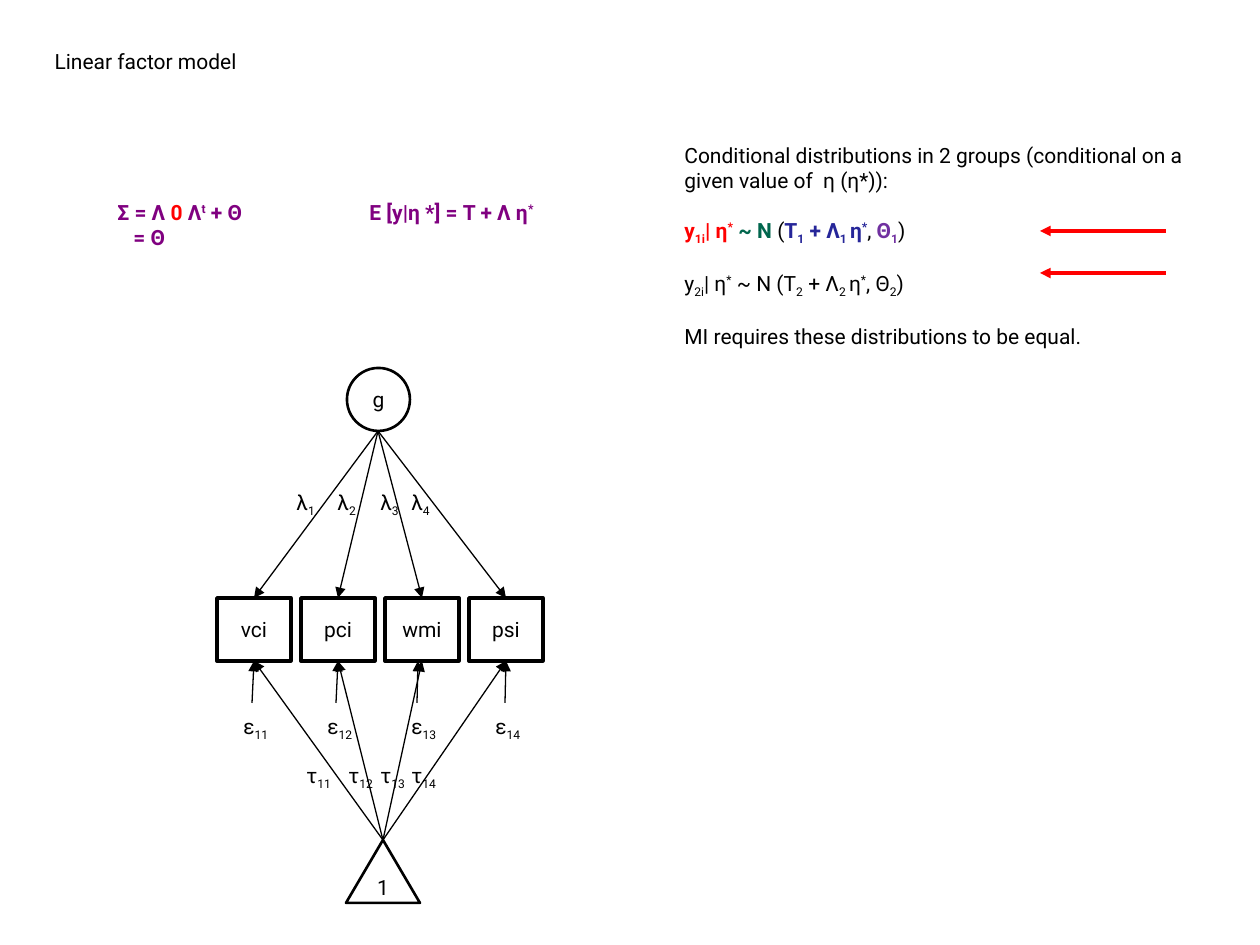
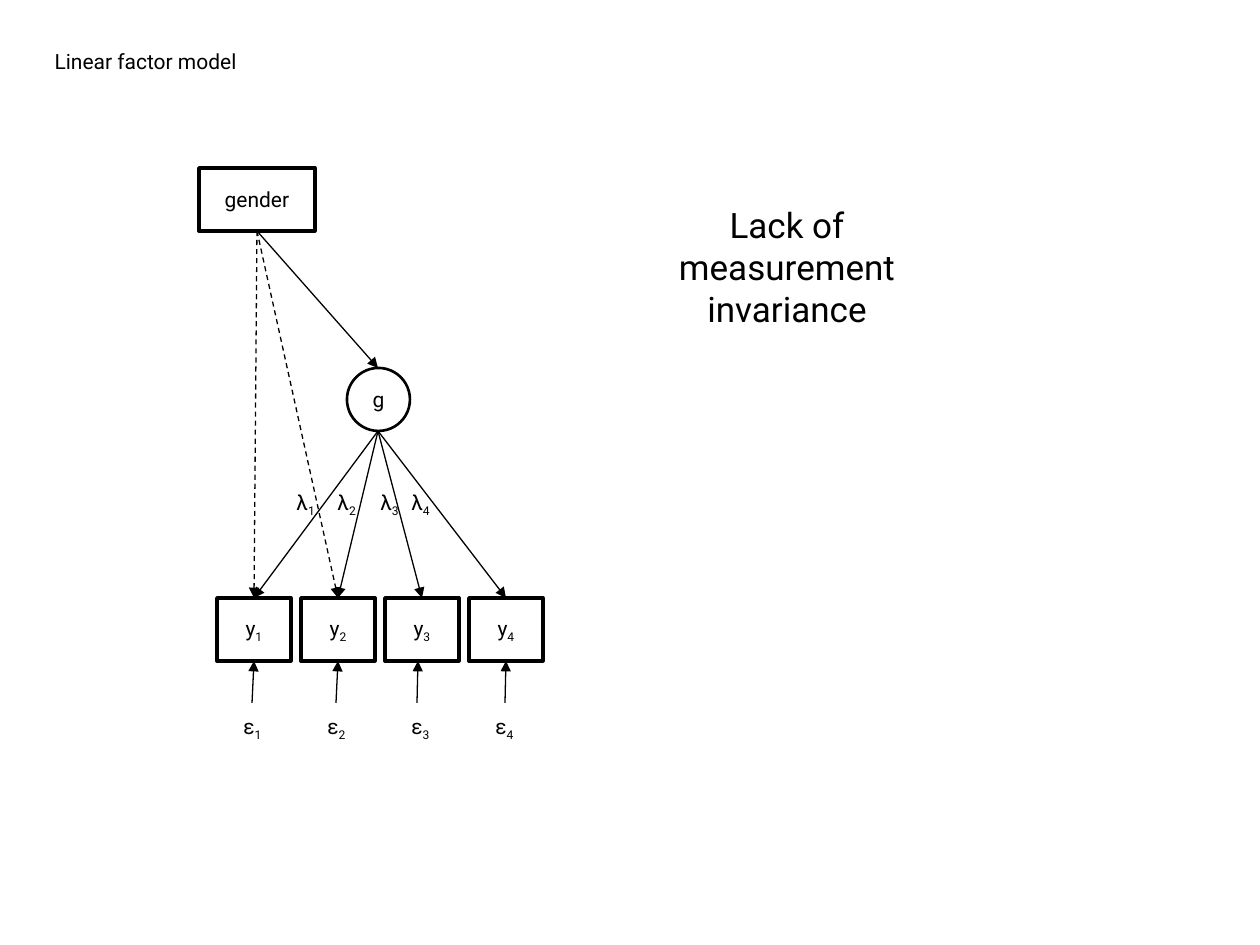
from lxml import etree
from pptx import Presentation
from pptx.dml.color import RGBColor
from pptx.enum.dml import MSO_LINE
from pptx.enum.shapes import MSO_CONNECTOR, MSO_SHAPE
from pptx.enum.text import MSO_ANCHOR, PP_ALIGN
from pptx.oxml.ns import qn
from pptx.util import Pt

PX = 914400 / 126
RECT, OVAL, TRIANGLE = MSO_SHAPE.RECTANGLE, MSO_SHAPE.OVAL, MSO_SHAPE.ISOSCELES_TRIANGLE
STRAIGHT, DASH = MSO_CONNECTOR.STRAIGHT, MSO_LINE.DASH
LEFT, CENTER = PP_ALIGN.LEFT, PP_ALIGN.CENTER
TOP_ANCHOR, MIDDLE_ANCHOR = MSO_ANCHOR.TOP, MSO_ANCHOR.MIDDLE
TOP_SIDE, BOTTOM_SIDE = 0, 2
SUB, SUP = -25, 30
FONT = "Roboto"
COLORS = {
    "black": "000000", "white": "FFFFFF", "red": "FF0000", "green": "00664D",
    "blue": "262699", "violet": "7030A0", "purple": "800080",
}
BOX_W, BOX_H, BOX_STEP = 74, 63, 84


def emu(*lengths):
    """Turn px lengths into EMU."""
    return [round(n * PX) for n in lengths]


def rgb(name):
    """Look up a colour by name."""
    return RGBColor.from_string(COLORS[name])


def write(p, runs, size=12, align=LEFT):
    """Fill a paragraph with (text, baseline, colour) runs; coloured runs are bold."""
    p.alignment = align
    p.font.name, p.font.size = FONT, Pt(size)
    for text, base, color in runs:
        r = p.add_run()
        r.text = text
        r.font.color.rgb = rgb(color)
        r.font.bold = color != "black"
        if base:
            r._r.get_or_add_rPr().set("baseline", str(base * 1000))


def symbol(letter, index=""):
    """Return the runs of a letter with an optional subscript."""
    runs = [(letter, 0, "black")]
    return runs + [(index, SUB, "black")] if index else runs


def text_box(s, box, paragraphs, size=12, align=LEFT, gap=0):
    """Add a wrapped text box with a gap in points between paragraphs."""
    tf = s.shapes.add_textbox(*emu(*box)).text_frame
    tf.word_wrap = True
    for i, runs in enumerate(paragraphs):
        p = tf.add_paragraph() if i else tf.paragraphs[0]
        p.space_before = Pt(gap if i else 0)
        write(p, runs, size, align)
    return tf


def node(s, kind, box, runs):
    """Add an outlined node with centred text."""
    sp = s.shapes.add_shape(kind, *emu(*box))
    sp.shadow.inherit = False
    sp.line.color.rgb = rgb("black")
    sp.line.width = Pt(2 if kind == RECT else 1.5)
    tf = sp.text_frame
    tf.vertical_anchor = MIDDLE_ANCHOR
    if kind == RECT:
        sp.fill.solid()
        sp.fill.fore_color.rgb = rgb("white")
    else:
        sp.fill.background()
        tf.margin_left = tf.margin_right = 0
    write(tf.paragraphs[0], runs, align=CENTER)
    return sp


def arrow(s, start, end, color="black", width=0.75, dash=None, source=None, target=None):
    """Draw an arrow, joined to (shape, side) pairs where given."""
    c = s.shapes.add_connector(STRAIGHT, *emu(*start, *end))
    if source:
        c.begin_connect(*source)
    if target:
        c.end_connect(*target)
    c.line.color.rgb = rgb(color)
    c.line.width = Pt(width)
    if dash:
        c.line.dash_style = dash
    etree.SubElement(c.line._get_or_add_ln(), qn("a:tailEnd"), type="triangle")
    etree.SubElement(c._element.spPr, qn("a:effectLst"))


def new_slide(prs):
    """Add a slide with the shared title."""
    s = prs.slides.add_slide(prs.slide_layouts[5])
    title = s.shapes.title
    title.left, title.top, title.width, title.height = emu(42, 42, 1176, 38)
    title.text_frame.vertical_anchor = TOP_ANCHOR
    write(title.text_frame.paragraphs[0], symbol("Linear factor model"))
    return s


def labels(s, letter, indices, lefts, top):
    """Place a row of subscripted path labels."""
    for index, left in zip(indices, lefts):
        text_box(s, (left, top, 53, 42), [symbol(letter, index)])


def factor_diagram(s, x, y, indicators, error_indices):
    """Draw the factor, its four indicators and their errors; return the indicators."""
    row, bottom = y + 230, y + 230 + BOX_H
    node(s, OVAL, (x + 130, y, 63, 63), symbol("g"))
    boxes = []
    for i, (runs, error_x) in enumerate(zip(indicators, (35, 119, 200, 288))):
        left = x + i * BOX_STEP
        middle = left + BOX_W // 2
        box = node(s, RECT, (left, row, BOX_W, BOX_H), runs)
        arrow(s, (x + 161, y + 63), (middle, row), target=(box, TOP_SIDE))
        centred = abs(x + error_x - middle) < 3
        arrow(s, (x + error_x, y + 335), (x + error_x + 1, bottom),
              target=(box, BOTTOM_SIDE) if centred else None)
        boxes.append(box)
    labels(s, "λ", "1234", [x + n for n in (67, 108, 151, 182)], y + 115)
    labels(s, "ε", error_indices, [x + 14 + i * BOX_STEP for i in range(4)], y + 339)
    return boxes


def intercepts(s, x, y, boxes, indices):
    """Draw the constant below the indicators with its intercept paths."""
    node(s, TRIANGLE, (x, y, BOX_W, BOX_H), symbol("1"))
    apex = (x + BOX_W // 2, y)
    for box in boxes:
        arrow(s, apex, apex, target=(box, BOTTOM_SIDE))
    labels(s, "τ", indices, [x + n for n in (-52, -10, 22, 53)], y - 84)


def equations(s, x, y):
    """Write the covariance and conditional mean equations."""
    tf = text_box(s, (x, y, 210, 63), [
        [("Σ = Λ ", 0, "purple"), ("0", 0, "red"), (" Λ", 0, "purple"),
         ("t", SUP, "purple"), (" + Θ", 0, "purple")],
        [("= Θ", 0, "purple")]])
    tf.paragraphs[1]._p.get_or_add_pPr().set("marL", str(emu(16)[0]))
    text_box(s, (x + 252, y, 284, 38),
             [[("E [y|η *] = Τ + Λ η", 0, "purple"), ("*", SUP, "purple")]])


def distribution(group, outcome, normal, mean, spread):
    """Return the runs of one group's conditional distribution."""
    return [
        ("y", 0, outcome), (group + "i", SUB, outcome), ("| η", 0, outcome),
        ("*", SUP, outcome), (" ~ N ", 0, normal), ("(", 0, "black"),
        ("Τ", 0, mean), (group, SUB, mean), (" + Λ", 0, mean),
        (group + " ", SUB, mean), ("η", 0, mean), ("*", SUP, mean),
        (", ", 0, "black"), ("Θ", 0, spread), (group, SUB, spread), (")", 0, "black"),
    ]


def distributions(s, x, y):
    """Write the two conditional distributions and point at them."""
    text_box(s, (x, y, 546, 321), [
        symbol("Conditional distributions in 2 groups (conditional on a "
               "given value of  η (η*)):"),
        distribution("1", "red", "green", "blue", "violet"),
        distribution("2", *["black"] * 4),
        symbol("MI requires these distributions to be equal."),
    ], gap=14)
    for top in (y + 95, y + 137):
        arrow(s, (x + 494, top), (x + 368, top), "red", 2)


def gender_effects(s, x, y, factor_top, boxes):
    """Draw gender with its path to the factor and dashed direct paths."""
    gender = node(s, RECT, (x, y, 116, BOX_H), symbol("gender"))
    start, source = (x + 58, y + BOX_H), (gender, BOTTOM_SIDE)
    arrow(s, start, factor_top, source=source)
    for box in boxes:
        arrow(s, start, start, dash=DASH, source=source, target=(box, TOP_SIDE))


def group_slide(prs):
    """Build the slide comparing conditional distributions."""
    s = new_slide(prs)
    indices = [f"1{i}" for i in range(1, 5)]
    names = [symbol(n) for n in ("vci", "pci", "wmi", "psi")]
    boxes = factor_diagram(s, 217, 368, names, indices)
    intercepts(s, 346, 840, boxes, indices)
    equations(s, 105, 193)
    distributions(s, 672, 136)


def invariance_slide(prs):
    """Build the slide on lack of measurement invariance."""
    s = new_slide(prs)
    boxes = factor_diagram(s, 217, 368, [symbol("y", i) for i in "1234"], "1234")
    gender_effects(s, 199, 168, (378, 368), boxes[:2])
    text_box(s, (640, 197, 294, 139), [symbol("Lack of measurement invariance")], 20, CENTER)


def main():
    """Build and save the presentation."""
    prs = Presentation()
    prs.slide_width, prs.slide_height = emu(1260, 945)
    group_slide(prs)
    invariance_slide(prs)
    prs.save("out.pptx")


if __name__ == "__main__":
    main()
